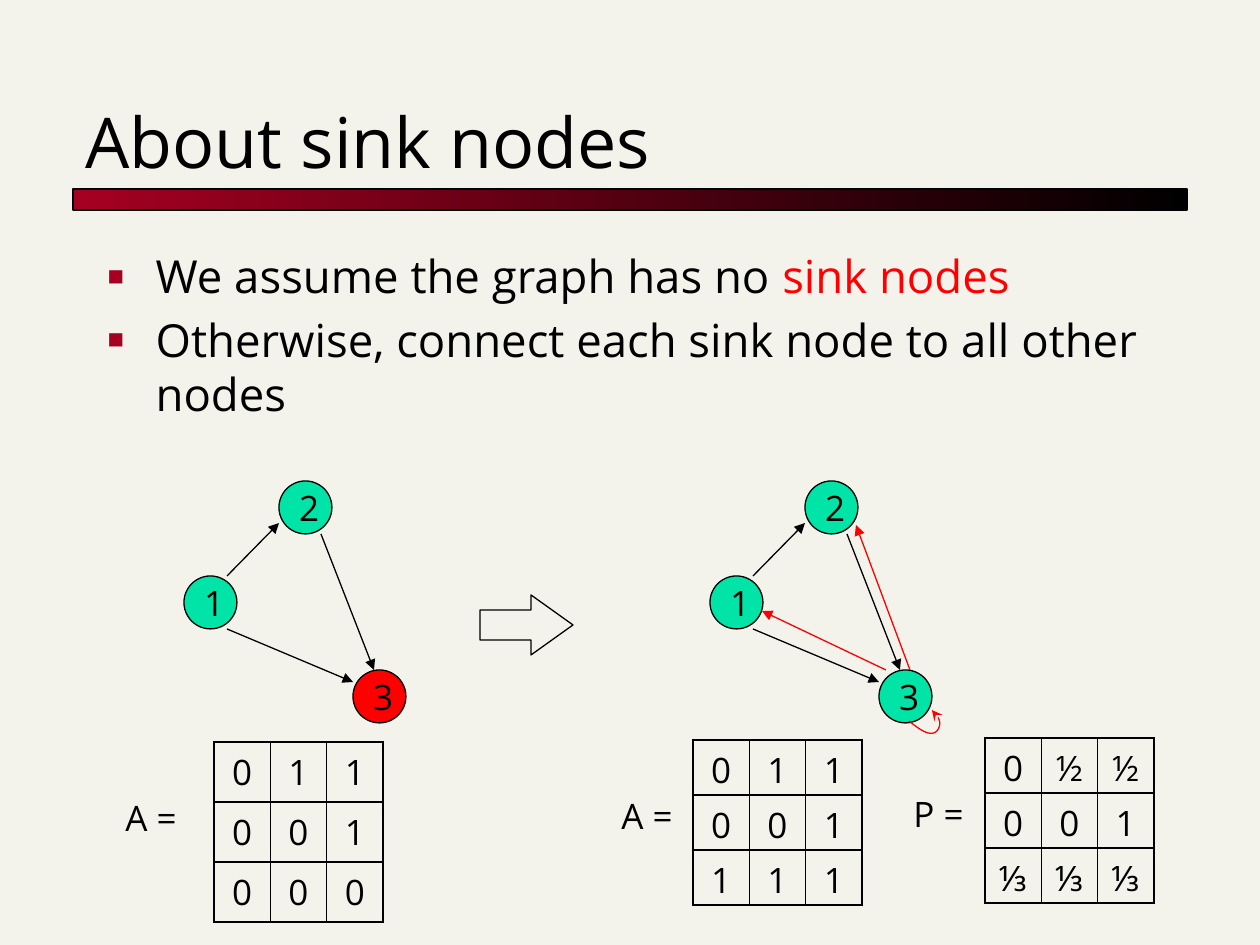
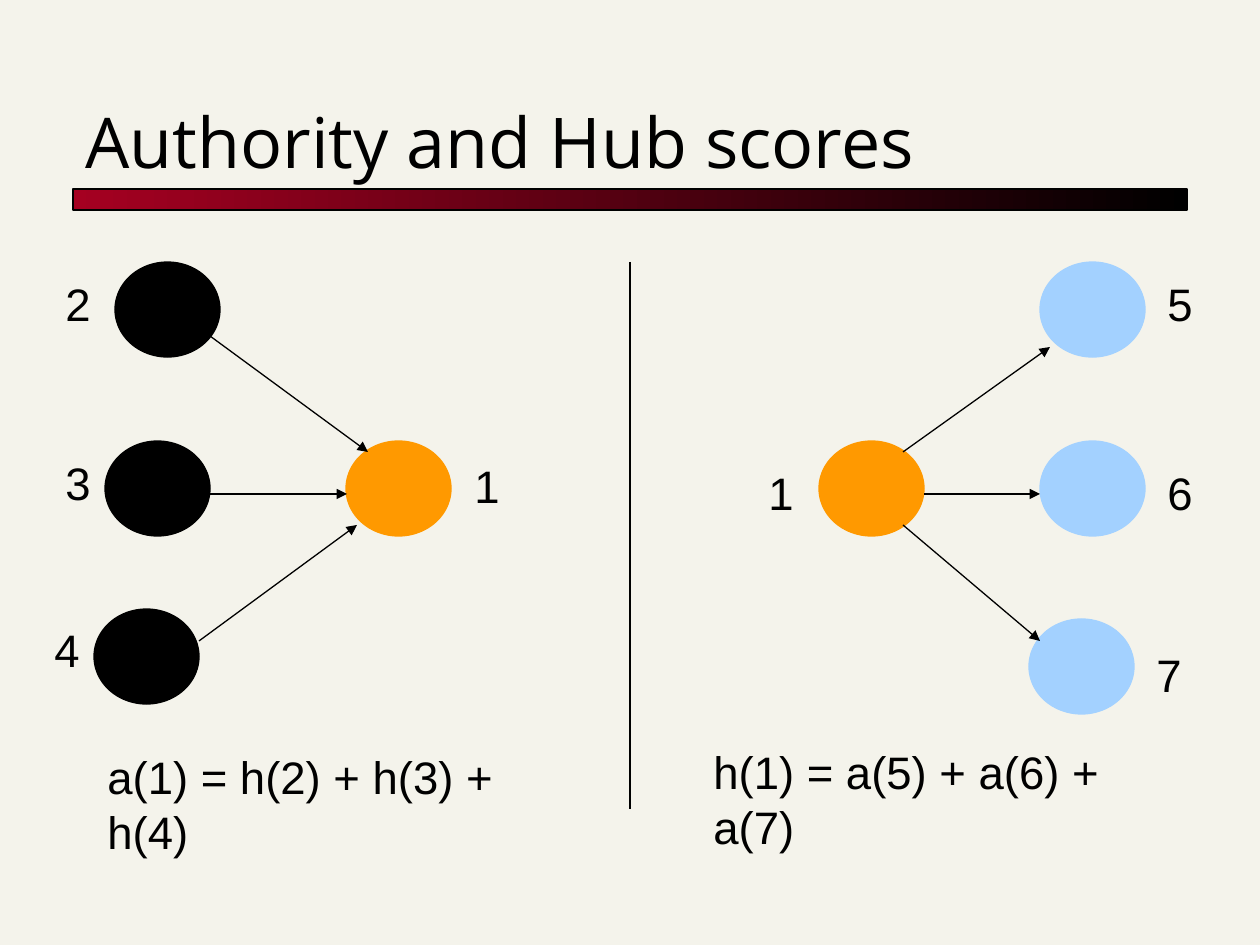
import pptx
import pptx.dml.color
import pptx.enum.dml
import pptx.enum.shapes
import pptx.enum.text
import pptx.oxml.ns
import pptx.util
from lxml import etree

COLORS = {
    "background": "F4F3EB",
    "accent": "A50021",
    "ink": "000000",
    "alert": "FF0000",
    "node": "00E4A8",
    "center": "FF9900",
    "target": "A3D1FF",
}
SANS = "Open Sans"
ARIAL = "Arial"
EMU_PER_PX = 914400 / 126
SHAPES = pptx.enum.shapes.MSO_SHAPE
ALIGN = pptx.enum.text.PP_ALIGN
ANCHOR = pptx.enum.text.MSO_ANCHOR
qn = pptx.oxml.ns.qn


def px(length):
    """Turn pixels into EMU."""
    return pptx.util.Emu(round(length * EMU_PER_PX))


def color(name):
    """Look up a named colour."""
    return pptx.dml.color.RGBColor.from_string(COLORS[name])


def add_run(paragraph, text, size, font=SANS, ink="ink"):
    """Append one formatted run."""
    run = paragraph.add_run()
    run.text = text
    run.font.size = pptx.util.Pt(size)
    run.font.name = font
    run.font.color.rgb = color(ink)


def set_line(shape, ink="ink", head=None):
    """Give a shape a thin line, with an optional arrowhead at its end."""
    shape.line.color.rgb = color(ink)
    shape.line.width = pptx.util.Pt(0.75)
    if head:
        line = shape.element.spPr.find(qn("a:ln"))
        etree.SubElement(line, qn("a:tailEnd"), type=head)


def add_shape(slide, kind, box, fill=None, ink="ink"):
    """Add a flat preset shape."""
    shape = slide.shapes.add_shape(kind, *map(px, box))
    shape.shadow.inherit = False
    if fill:
        shape.fill.solid()
        shape.fill.fore_color.rgb = color(fill)
    else:
        shape.fill.background()
    set_line(shape, ink)
    return shape


def add_line(slide, start, end, ink="ink", head="triangle"):
    """Add a straight line or arrow."""
    connector = slide.shapes.add_connector(
        pptx.enum.shapes.MSO_CONNECTOR.STRAIGHT, *map(px, start + end))
    set_line(connector, ink, head)
    etree.SubElement(connector.element.spPr, qn("a:effectLst"))


def add_label(slide, box, text, size, font):
    """Add a text box holding one run."""
    frame = slide.shapes.add_textbox(*map(px, box)).text_frame
    frame.word_wrap = True
    add_run(frame.paragraphs[0], text, size, font)


def place(placeholder, box):
    """Move a placeholder and return its text frame."""
    placeholder.left, placeholder.top, placeholder.width, placeholder.height = map(px, box)
    frame = placeholder.text_frame
    frame.auto_size = pptx.enum.text.MSO_AUTO_SIZE.NONE
    return frame


def add_slide(presentation, layout, title):
    """Add a slide with the shared title style and gradient band."""
    slide = presentation.slides.add_slide(presentation.slide_layouts[layout])
    band = add_shape(slide, SHAPES.RECTANGLE, (73, 189, 1114, 21))
    band.fill.gradient()
    band.fill.gradient_angle = 0
    for stop, name, position in zip(band.fill.gradient_stops, ("accent", "ink"), (0, 1)):
        stop.color.rgb = color(name)
        stop.position = position
    frame = place(slide.shapes.title, (73, 53, 1113, 136))
    frame.vertical_anchor = ANCHOR.BOTTOM
    frame.paragraphs[0].alignment = ALIGN.LEFT
    add_run(frame.paragraphs[0], title, 40)
    return slide


def add_bullets(slide, items):
    """Fill the body placeholder with square bullets, each a list of runs."""
    frame = place(slide.placeholders[1], (95, 242, 1071, 672))
    for index, runs in enumerate(items):
        paragraph = frame.add_paragraph() if index else frame.paragraphs[0]
        properties = paragraph._p.get_or_add_pPr()
        properties.set("marL", str(px(48)))
        properties.set("indent", str(-px(48)))
        bullet_color = etree.SubElement(properties, qn("a:buClr"))
        etree.SubElement(bullet_color, qn("a:srgbClr"), val=COLORS["accent"])
        etree.SubElement(properties, qn("a:buSzPct"), val="60000")
        etree.SubElement(properties, qn("a:buFont"), typeface=ARIAL)
        etree.SubElement(properties, qn("a:buChar"), char="■")
        for text, ink in runs:
            add_run(paragraph, text, 26, ink=ink)


def add_graph(slide, left, sink_fill):
    """Draw the three-node graph with its black edges."""
    nodes = (("1", 0, 576, "node"), ("2", 95, 481, "node"), ("3", 169, 670, sink_fill))
    for name, x, y, fill in nodes:
        node = add_shape(slide, SHAPES.OVAL, (left + x, y, 53, 53), fill)
        frame = node.text_frame
        frame.word_wrap = False
        frame.vertical_anchor = ANCHOR.MIDDLE
        frame.paragraphs[0].alignment = ALIGN.LEFT
        add_run(frame.paragraphs[0], name, 20)
    for x1, y1, x2, y2 in ((43, 576, 95, 523), (137, 534, 190, 670), (43, 629, 169, 682)):
        add_line(slide, (left + x1, y1), (left + x2, y2))


def add_self_loop(slide):
    """Draw the red arrow from node 3 back to itself."""
    curves = (((909, 721), (918, 728), (930, 738), (937, 731)),
              ((937, 731), (941, 726), (942, 719), (932, 710)))
    points = []
    for curve in curves:
        for step in range(1, 13):
            t = step / 12
            weights = ((1 - t) ** 3, 3 * t * (1 - t) ** 2, 3 * t * t * (1 - t), t ** 3)
            points.append(tuple(px(sum(w * p[axis] for w, p in zip(weights, curve)))
                                for axis in (0, 1)))
    builder = slide.shapes.build_freeform(*map(px, curves[0][0]))
    builder.add_line_segments(points, close=False)
    loop = builder.convert_to_shape()
    loop.shadow.inherit = False
    loop.fill.background()
    set_line(loop, "alert", "stealth")


def add_borders(cell):
    """Draw a black line on each side of a cell."""
    properties = cell._tc.get_or_add_tcPr()
    for side in ("lnL", "lnR", "lnT", "lnB"):
        line = etree.SubElement(properties, qn(f"a:{side}"), w=str(pptx.util.Pt(1)))
        fill = etree.SubElement(line, qn("a:solidFill"))
        etree.SubElement(fill, qn("a:srgbClr"), val=COLORS["ink"])


def add_matrix(slide, name, left, top, row_height, rows):
    """Add a bordered matrix; each string in rows is one row of entries."""
    size = len(rows)
    table = slide.shapes.add_table(
        size, size, px(left), px(top), px(169), px(row_height * size)).table
    table.first_row = table.horz_banding = False
    for row_index, entries in enumerate(rows):
        table.rows[row_index].height = px(row_height)
        for column_index, entry in enumerate(entries):
            cell = table.cell(row_index, column_index)
            add_borders(cell)
            cell.fill.background()
            cell.margin_top = px(6)
            cell.margin_bottom = px(row_height - 54)
            paragraph = cell.text_frame.paragraphs[0]
            paragraph.alignment = ALIGN.CENTER
            add_run(paragraph, entry, 20)
    return add_label(slide, (left - 84 - name[1], top + 48, 83, 55), name[0], 20, SANS)


def add_sink_slide(presentation):
    """Build the slide about sink nodes."""
    slide = add_slide(presentation, 1, "About sink nodes")
    add_bullets(slide, (
        (("We assume the graph has no ", "ink"), ("sink nodes", "alert")),
        (("Otherwise, connect each sink node to all other nodes", "ink"),),
    ))
    add_graph(slide, 184, "alert")
    add_graph(slide, 710, "node")
    arrow = add_shape(slide, SHAPES.RIGHT_ARROW, (480, 595, 93, 60))
    arrow.adjustments[0] = 0.5
    arrow.adjustments[1] = 0.7
    add_line(slide, (886, 670), (762, 611), "alert")
    add_line(slide, (910, 670), (856, 525), "alert")
    add_self_loop(slide)
    add_matrix(slide, ("A =", 17), 214, 742, 60, ("011", "001", "000"))
    add_matrix(slide, ("A =", 0), 693, 740, 55, ("011", "001", "111"))
    add_matrix(slide, ("P =", 0), 985, 738, 55, ("0½½", "001", "⅓⅓⅓"))


def add_scores_slide(presentation):
    """Build the slide about authority and hub scores."""
    slide = add_slide(presentation, 5, "Authority and Hub scores")
    nodes = (
        ("2", 115, 262, "ink", 53, 270), ("3", 105, 441, "ink", 53, 449),
        ("4", 94, 609, "ink", 42, 616), ("1", 346, 441, "center", 462, 452),
        ("1", 819, 441, "center", 756, 459), ("5", 1040, 262, "target", 1155, 270),
        ("6", 1040, 441, "target", 1155, 459), ("7", 1029, 619, "target", 1144, 641),
    )
    for name, x, y, fill, label_x, label_y in nodes:
        add_shape(slide, SHAPES.OVAL, (x, y, 105, 95), fill, fill)
        add_label(slide, (label_x, label_y, 60, 67), name, 26, ARIAL)
    arrows = (
        ((210, 336), (368, 452)), ((210, 494), (347, 494)), ((199, 641), (357, 525)),
        ((903, 452), (1050, 347)), ((924, 494), (1040, 494)), ((903, 525), (1040, 641)),
    )
    for start, end in arrows:
        add_line(slide, start, end)
    add_line(slide, (630, 262), (630, 809), head=None)
    add_label(slide, (95, 743, 480, 121), "a(1) = h(2) + h(3) + h(4)", 26, ARIAL)
    add_label(slide, (701, 738, 480, 121), "h(1) = a(5) + a(6) + a(7)", 26, ARIAL)


def main():
    """Build and save the presentation."""
    presentation = pptx.Presentation()
    presentation.slide_width, presentation.slide_height = px(1260), px(945)
    background = presentation.slide_master.background.fill
    background.solid()
    background.fore_color.rgb = color("background")
    add_sink_slide(presentation)
    add_scores_slide(presentation)
    presentation.save("out.pptx")


if __name__ == "__main__":
    main()
